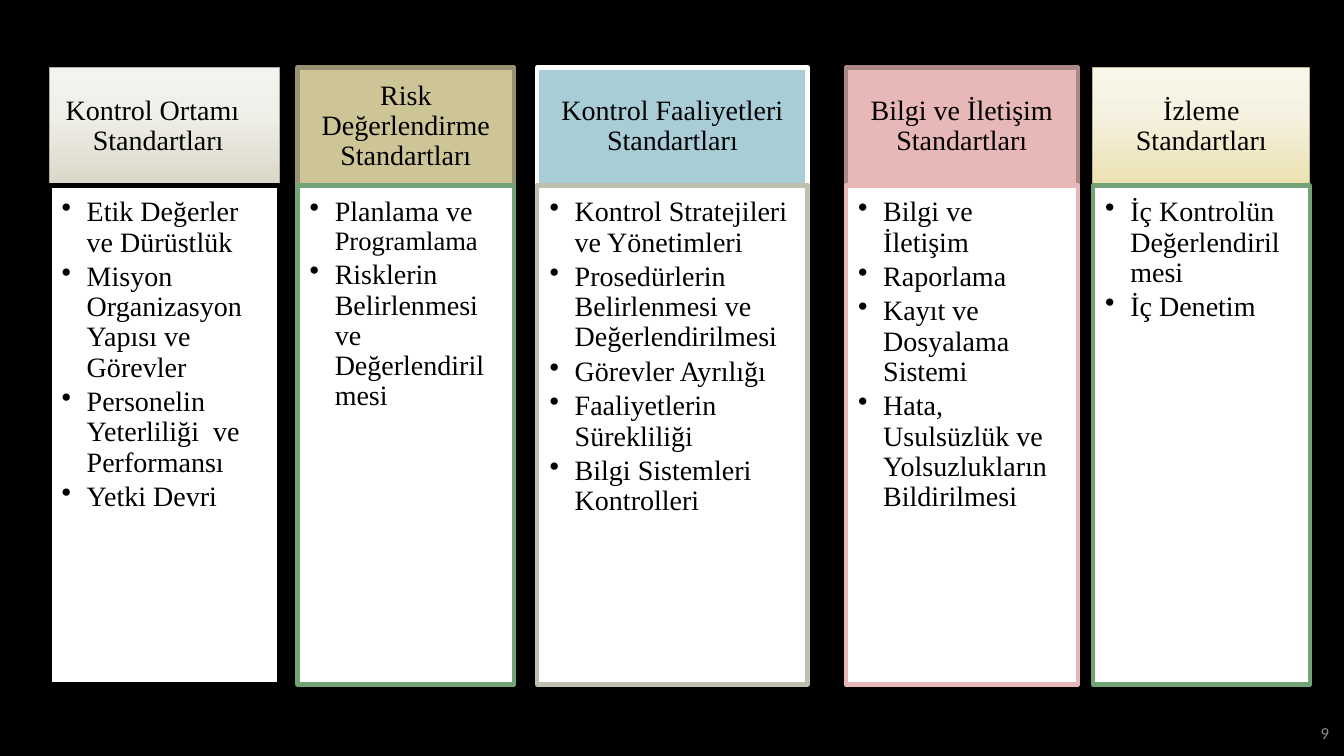
from copy import deepcopy

from lxml import etree
from pptx import Presentation
from pptx.dml.color import RGBColor
from pptx.enum.shapes import MSO_SHAPE
from pptx.enum.text import MSO_ANCHOR, PP_ALIGN
from pptx.oxml.ns import qn
from pptx.util import Inches, Pt

COLORS = {
    "black": "000000", "white": "FFFFFF", "gray": "8C8C8C",
    "stone": "C0BEAF", "stone_line": "AEAC9F",
    "olive": "CEC597", "olive_line": "989270",
    "green": "72A376", "blue": "A8CDD7",
    "pink": "E8B7B7", "pink_line": "AC8787", "sand_line": "BBB389",
    "stone_low": "DAD7C7", "stone_mid": "F0EFE9", "stone_top": "F4F3EF",
    "sand_low": "EBE1B1", "sand_mid": "F6F2E2", "sand_top": "F9F6EA",
}
STONE = ("stone_low", "stone_mid", "stone_top")
SAND = ("sand_low", "sand_mid", "sand_top")
HEAD_TOP, HEAD_HEIGHT = 0.67, 1.17
BODY_TOP, BODY_HEIGHT = HEAD_TOP + HEAD_HEIGHT, 4.95
HEAD_INSETS = (0.16, 0.09, 0.16, 0.09)
BODY_INSETS = (0.12, 0.12, 0.16, 0.17)

# left, width, heading lines, heading fill, heading line, line width, body line, items
COLUMNS = [
    (0.49, 2.28, ["Kontrol Ortamı", "Standartları"], STONE, "stone_line", 0.75, "black",
     ["Etik Değerler ve Dürüstlük", "Misyon Organizasyon Yapısı ve Görevler",
      "Personelin Yeterliliği  ve Performansı", "Yetki Devri"]),
    (2.95, 2.15, ["Risk Değerlendirme Standartları"], "olive", "olive_line", 3, "green",
     [[("Planlama ve ", 20), ("Programlama", 19)],
      "Risklerin Belirlenmesi ve Değerlendirilmesi"]),
    (5.33, 2.68, ["Kontrol Faaliyetleri Standartları"], "blue", "white", 3, "stone",
     ["Kontrol Stratejileri ve Yönetimleri",
      "Prosedürlerin Belirlenmesi ve Değerlendirilmesi", "Görevler Ayrılığı",
      "Faaliyetlerin Sürekliliği", "Bilgi Sistemleri Kontrolleri"]),
    (8.39, 2.3, ["Bilgi ve İletişim Standartları"], "pink", "pink_line", 3, "pink",
     ["Bilgi ve İletişim", "Raporlama", "Kayıt ve Dosyalama Sistemi",
      "Hata, Usulsüzlük ve Yolsuzlukların Bildirilmesi"]),
    (10.84, 2.15, ["İzleme Standartları"], SAND, "sand_line", 0.75, "green",
     ["İç Kontrolün Değerlendirilmesi", "İç Denetim"]),
]


def rgb(name):
    return RGBColor.from_string(COLORS[name])


def add_run(p, text, size=20, font="Times New Roman", color="black"):
    r = p.add_run()
    r.text = text
    r.font.size = Pt(size)
    r.font.name = font
    r.font.color.rgb = rgb(color)


def next_paragraph(tf, index):
    p = tf.paragraphs[0] if index == 0 else tf.add_paragraph()
    p.line_spacing = 0.9
    return p


def set_indent(p, left, first=0.0):
    pPr = p._p.get_or_add_pPr()
    pPr.set("marL", str(Inches(left)))
    pPr.set("indent", str(Inches(first)))
    return pPr


def fill_gradient(fill, names):
    """Three stops running from the bottom edge to the top."""
    fill.gradient()
    fill.gradient_angle = 90
    stops = fill._fill._gradFill.find(qn("a:gsLst"))
    stops.insert(1, deepcopy(stops[0]))
    for stop, name, position in zip(fill.gradient_stops, names, (0, 0.62, 1)):
        stop.color.rgb = rgb(name)
        stop.position = position


def add_box(s, left, top, width, height, fill, line, line_width, insets, anchor):
    sp = s.shapes.add_shape(MSO_SHAPE.RECTANGLE, Inches(left), Inches(top),
                            Inches(width), Inches(height))
    sp.shadow.inherit = False
    if isinstance(fill, tuple):
        fill_gradient(sp.fill, fill)
    else:
        sp.fill.solid()
        sp.fill.fore_color.rgb = rgb(fill)
    sp.line.color.rgb = rgb(line)
    sp.line.width = Pt(line_width)
    tf = sp.text_frame
    tf.word_wrap = True
    tf.vertical_anchor = anchor
    tf.margin_left, tf.margin_top, tf.margin_right, tf.margin_bottom = map(Inches, insets)
    return tf


def add_heading(s, left, width, lines, fill, line, line_width):
    tf = add_box(s, left, HEAD_TOP, width, HEAD_HEIGHT, fill, line, line_width,
                 HEAD_INSETS, MSO_ANCHOR.MIDDLE)
    for i, text in enumerate(lines):
        p = next_paragraph(tf, i)
        # A heading split by hand is stepped from the left
        if len(lines) > 1:
            p.alignment = PP_ALIGN.LEFT
            set_indent(p, 0.27 * i)
        else:
            p.alignment = PP_ALIGN.CENTER
        add_run(p, text)


def add_bullets(s, left, width, line, items):
    tf = add_box(s, left, BODY_TOP, width, BODY_HEIGHT, "white", line, 3,
                 BODY_INSETS, MSO_ANCHOR.TOP)
    for i, item in enumerate(items):
        p = next_paragraph(tf, i)
        p.alignment = PP_ALIGN.LEFT
        p.space_after = Pt(3)
        pPr = set_indent(p, 0.25, -0.25)
        etree.SubElement(pPr, qn("a:buChar")).set("char", "•")
        for text, size in [(item, 20)] if isinstance(item, str) else item:
            add_run(p, text, size)


def add_page_number(s, number):
    sp = s.shapes.add_textbox(Inches(12.6), Inches(7.12), Inches(0.68), Inches(0.3))
    tf = sp.text_frame
    tf.word_wrap = True
    tf.vertical_anchor = MSO_ANCHOR.MIDDLE
    p = tf.paragraphs[0]
    p.alignment = PP_ALIGN.RIGHT
    add_run(p, number, 12, "Calibri", "gray")


def main():
    prs = Presentation()
    prs.slide_width, prs.slide_height = Inches(13.33), Inches(7.5)
    s = prs.slides.add_slide(prs.slide_layouts[6])
    s.background.fill.solid()
    s.background.fill.fore_color.rgb = rgb("black")

    # Five columns of standards
    for left, width, lines, fill, line, line_width, body_line, items in COLUMNS:
        add_heading(s, left, width, lines, fill, line, line_width)
        add_bullets(s, left, width, body_line, items)

    # Footer
    add_page_number(s, "9")
    prs.save("out.pptx")


if __name__ == "__main__":
    main()
